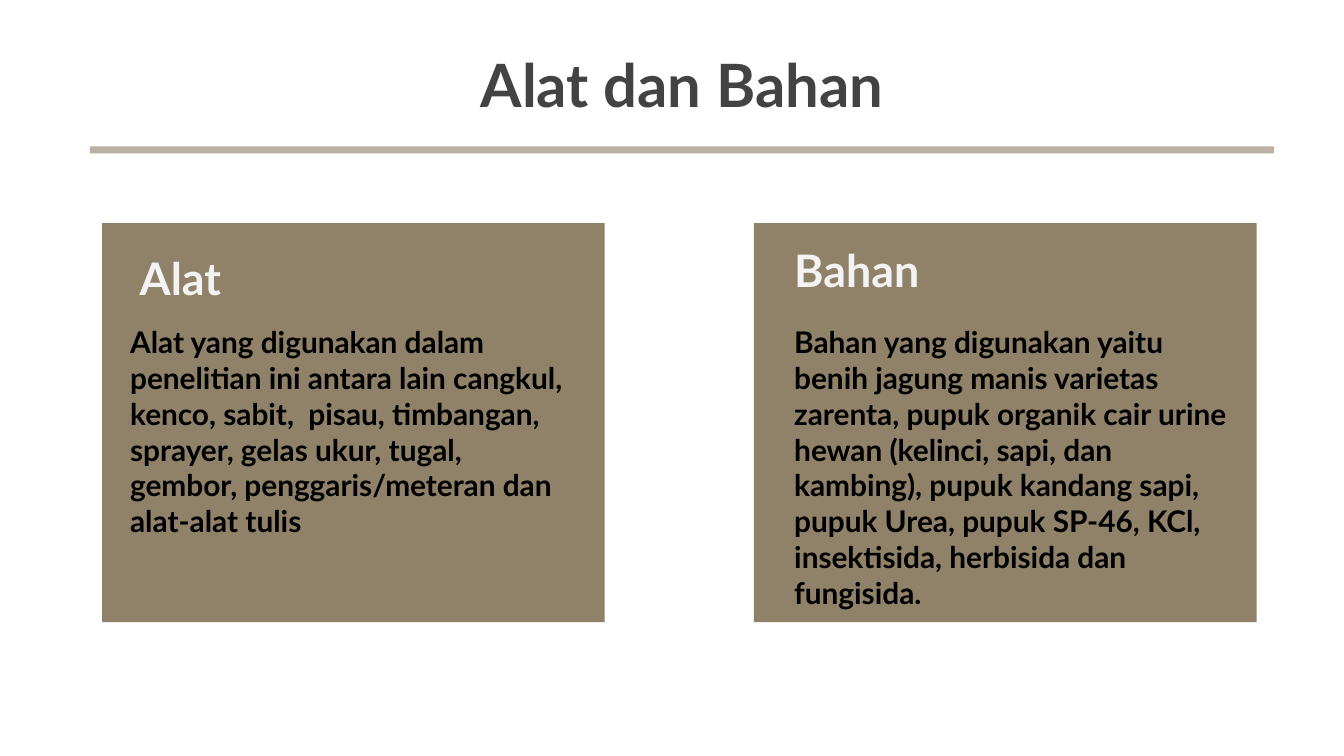
from lxml.etree import SubElement
from pptx import Presentation
from pptx.dml.color import RGBColor
from pptx.enum.shapes import MSO_SHAPE as SHAPE
from pptx.enum.text import MSO_ANCHOR as ANCHOR, MSO_AUTO_SIZE as AUTO, PP_ALIGN as ALIGN
from pptx.oxml.ns import qn
from pptx.util import Cm, Pt

OLIVE = RGBColor(0x90, 0x82, 0x69)
CHARCOAL = RGBColor(0x43, 0x43, 0x43)
PALE = RGBColor(0xF3, 0xF3, 0xF3)
BLACK = RGBColor(0, 0, 0)

TOOLS = ("Alat yang digunakan dalam penelitian ini antara lain cangkul, kenco, sabit,  pisau, "
         "timbangan, sprayer, gelas ukur, tugal, gembor, penggaris/meteran dan alat-alat tulis")
MATERIALS = ("Bahan yang digunakan yaitu benih jagung manis varietas zarenta, pupuk organik cair "
             "urine hewan (kelinci, sapi, dan kambing), pupuk kandang sapi, pupuk Urea, "
             "pupuk SP-46, KCl, insektisida, herbisida dan fungisida.")


def set_attrs(obj, values):
    for name, value in values.items():
        setattr(obj, name, value)


def place(sp, left, top, width, height):
    set_attrs(sp, dict(left=Cm(left), top=Cm(top), width=Cm(width), height=Cm(height)))


def fill_text(sp, box, text, size, color, anchor, align=ALIGN.LEFT, after=0):
    place(sp, *box)
    tf = sp.text_frame
    inset = Cm(0.25)
    set_attrs(tf, dict(word_wrap=True, auto_size=AUTO.NONE, vertical_anchor=anchor,
                       margin_left=inset, margin_right=inset,
                       margin_top=inset, margin_bottom=inset))
    p = tf.paragraphs[0]
    set_attrs(p, dict(alignment=align, line_spacing=1.0,
                      space_before=Pt(0), space_after=Pt(after)))
    pPr = p._p.get_or_add_pPr()
    pPr.set("marL", "0")
    pPr.set("indent", "0")
    SubElement(pPr, qn("a:buNone"))
    r = p.add_run()
    r.text = text
    set_attrs(r.font, dict(name="Lato", size=Pt(size), bold=True))
    r.font.color.rgb = color


def add_block(s, left, top, width, height):
    sp = s.shapes.add_shape(SHAPE.RECTANGLE, Cm(left), Cm(top), Cm(width), Cm(height))
    sp.shadow.inherit = False
    sp.fill.solid()
    sp.fill.fore_color.rgb = OLIVE
    sp.line.fill.background()
    s.shapes._spTree.insert(2, sp._element)
    return sp


def add_header(s, left, top, width):
    title_w = 10.24
    fill_text(s.shapes.title, (left + (width - title_w) / 2, top, title_w, 1.35),
              "Alat dan Bahan", 32, CHARCOAL, ANCHOR.MIDDLE, ALIGN.CENTER)
    rule = add_block(s, left, top + 1.86, width, 0.13)
    color = rule._element.spPr.find(qn("a:solidFill"))[0]
    SubElement(color, qn("a:alpha")).set("val", "62000")


def add_panel(s, box, holders, heading, body, heading_at, body_dx, body_h):
    left, top = box[:2]
    add_block(s, *box)
    dx, dy = heading_at
    fill_text(holders[0], (left + dx, top + dy, 5.08, 1.22), heading, 24, PALE, ANCHOR.BOTTOM)
    fill_text(holders[1], (left + body_dx, top + 1.65, 8.74, body_h),
              body, 16, BLACK, ANCHOR.TOP, after=16)


def main():
    prs = Presentation()
    set_attrs(prs, dict(slide_width=Cm(25.4), slide_height=Cm(14.29)))
    s = prs.slides.add_slide(prs.slide_layouts.get_by_name("Comparison"))
    ph = s.placeholders
    add_header(s, 1.7, 0.91, 22.38)
    add_panel(s, (1.93, 4.22, 9.5, 7.54), (ph[1], ph[2]), "Alat", TOOLS, (0.46, 0.56), 0.28, 2.62)
    add_panel(s, (14.25, 4.22, 9.5, 7.54), (ph[3], ph[4]), "Bahan", MATERIALS,
              (0.51, 0.41), 0.51, 5.59)
    prs.save("out.pptx")


if __name__ == "__main__":
    main()
